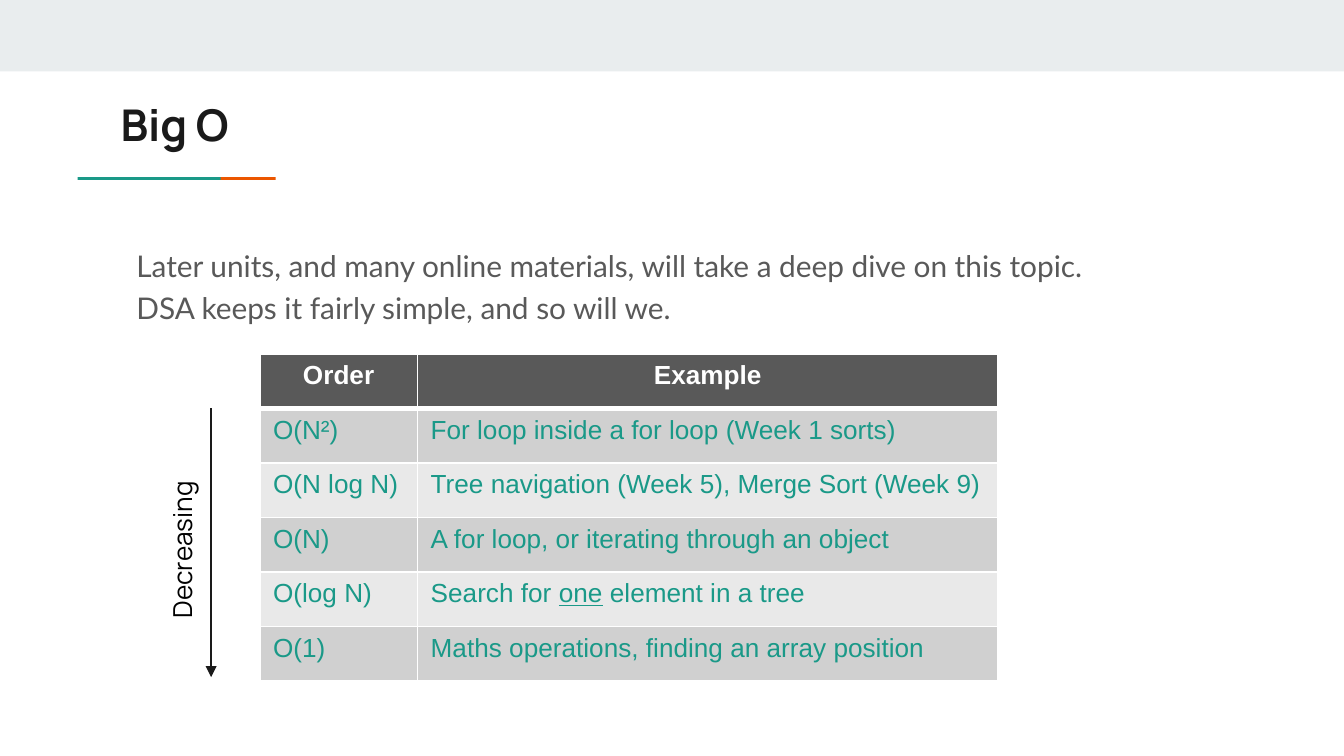
"""Build the Big O slide with its complexity table."""
from lxml import etree
from pptx import Presentation
from pptx import util as u
from pptx.dml.color import RGBColor
from pptx.enum import shapes, text
from pptx.oxml import ns

WHITE = RGBColor(0xFF, 0xFF, 0xFF)
BLACK = RGBColor(0, 0, 0)
INK = RGBColor(0x1A, 0x1A, 0x1A)
GREY = RGBColor(0x59, 0x59, 0x59)
MIST = RGBColor(0xE9, 0xED, 0xEE)
TEAL = RGBColor(0x1A, 0x99, 0x88)
ORANGE = RGBColor(0xEB, 0x56, 0x00)
BANDS = (RGBColor(0xE9, 0xE9, 0xE9), RGBColor(0xD0, 0xD0, 0xD0))

ROWS = [
    ("Order", "Example"),
    ("O(N²)", "For loop inside a for loop (Week 1 sorts)"),
    ("O(N log N)", "Tree navigation (Week 5), Merge Sort (Week 9)"),
    ("O(N)", "A for loop, or iterating through an object"),
    ("O(log N)", "Search for _one_ element in a tree"),
    ("O(1)", "Maths operations, finding an array position"),
]


class SlideBuilder:
    def __init__(self, slide, heading_font, body_font, table_font):
        self.slide = slide
        self.heading_font = heading_font
        self.body_font = body_font
        self.table_font = table_font

    def style(self, run, font, size, color, bold=False):
        run.font.name = font
        run.font.size = u.Pt(size)
        run.font.color.rgb = color
        run.font.bold = bold

    def bar(self, left, top, width, height, color):
        shape = self.slide.shapes.add_shape(
            shapes.MSO_SHAPE.RECTANGLE, u.Cm(left), u.Cm(top), u.Cm(width), u.Cm(height))
        shape.shadow.inherit = False
        shape.fill.solid()
        shape.fill.fore_color.rgb = color
        shape.line.fill.background()

    def label(self, box, wording, font, size, color, bold=False, rotation=0):
        shape = self.slide.shapes.add_textbox(*map(u.Cm, box))
        shape.rotation = rotation
        frame = shape.text_frame
        frame.word_wrap = True
        frame.vertical_anchor = text.MSO_ANCHOR.TOP
        frame.margin_left = frame.margin_right = u.Cm(0.25)
        frame.margin_top = frame.margin_bottom = u.Cm(0.25)
        frame.text = wording
        paragraph = frame.paragraphs[0]
        for run in paragraph.runs:
            self.style(run, font, size, color, bold)
        return paragraph

    def arrow(self, x, top, bottom, color):
        connector = self.slide.shapes.add_connector(
            shapes.MSO_CONNECTOR.STRAIGHT, u.Cm(x), u.Cm(top), u.Cm(x), u.Cm(bottom))
        connector.line.color.rgb = color
        connector.line.width = u.Pt(0.75)
        line = connector.line._get_or_add_ln()
        etree.SubElement(line, ns.qn("a:tailEnd"), type="triangle")
        etree.SubElement(connector._element.spPr, ns.qn("a:effectLst"))

    def borders(self, cell, bottom):
        properties = cell._tc.get_or_add_tcPr()
        widths = {"lnL": 1, "lnR": 1, "lnT": 1, "lnB": bottom}
        for position, (tag, width) in enumerate(widths.items()):
            line = etree.Element(ns.qn(f"a:{tag}"), w=str(u.Pt(width)))
            fill = etree.SubElement(line, ns.qn("a:solidFill"))
            etree.SubElement(fill, ns.qn("a:srgbClr"), val=str(WHITE))
            properties.insert(position, line)

    def cell(self, cell, wording, row):
        header = row == 0
        cell.margin_left = cell.margin_right = u.Cm(0.25)
        cell.margin_top = cell.margin_bottom = u.Cm(0.13)
        cell.fill.solid()
        cell.fill.fore_color.rgb = GREY if header else BANDS[row % 2]
        self.borders(cell, bottom=3 if header else 1)
        paragraph = cell.text_frame.paragraphs[0]
        paragraph.alignment = text.PP_ALIGN.CENTER if header else text.PP_ALIGN.LEFT
        for index, part in enumerate(wording.split("_")):
            run = paragraph.add_run()
            run.text = part
            self.style(run, self.table_font, 14, WHITE if header else TEAL, header)
            if index % 2:
                run.font.underline = True

    def table(self, left, top, widths, row_height, rows):
        table = self.slide.shapes.add_table(
            len(rows), len(widths), u.Cm(left), u.Cm(top),
            u.Cm(sum(widths)), u.Cm(row_height * len(rows))).table
        for column, width in zip(table.columns, widths):
            column.width = u.Cm(width)
        for row, wordings in enumerate(rows):
            for column, wording in enumerate(wordings):
                self.cell(table.cell(row, column), wording, row)


def main():
    presentation = Presentation()
    presentation.slide_width = u.Cm(25.4)
    presentation.slide_height = u.Cm(14.29)
    slide = presentation.slides.add_slide(presentation.slide_layouts[6])
    builder = SlideBuilder(slide, "Manrope", "Lato", "Arial")

    builder.bar(0, 0, 25.4, 1.35, MIST)
    builder.bar(2.51, 3.35, 2.7, 0.05, ORANGE)
    builder.bar(1.47, 3.35, 2.7, 0.05, TEAL)
    builder.label((2.03, 1.6, 21.36, 1.5), "Big O", builder.heading_font, 23.4, INK, bold=True)
    body = builder.label(
        (2.03, 4.34, 21.36, 7.72),
        "Later units, and many online materials, will take a deep dive on this topic.\v"
        "DSA keeps it fairly simple, and so will we.",
        builder.body_font, 16, GREY)
    body.line_spacing = 1.15
    body._p.get_or_add_pPr().set("marL", str(u.Cm(0.3)))
    builder.table(4.91, 6.69, (2.98, 10.97), 1.03, ROWS)
    builder.arrow(3.99, 7.72, 12.8, INK)
    builder.label((1.85, 9.78, 3.2, 1.12), "Decreasing", builder.heading_font, 14, BLACK, rotation=270)

    presentation.save("out.pptx")


if __name__ == "__main__":
    main()
